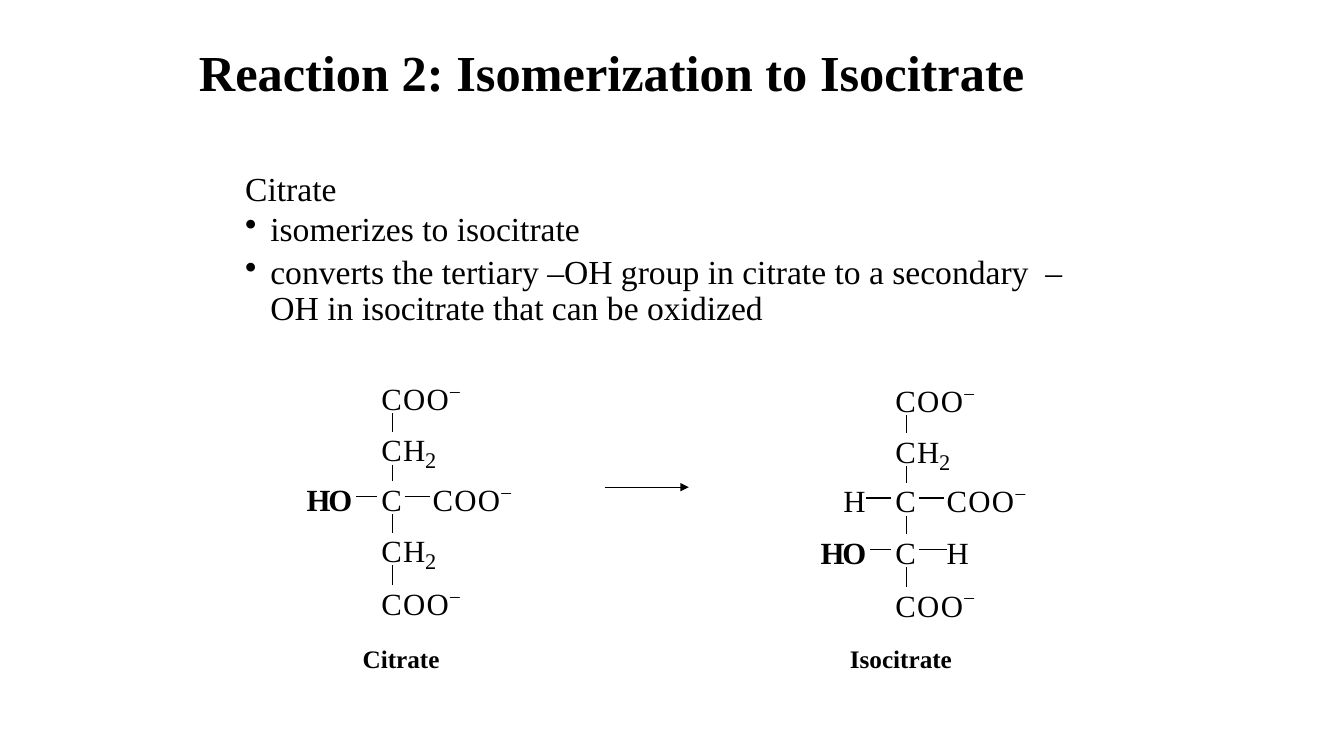
import lxml.etree
import pptx
import pptx.dml.color
import pptx.enum.shapes
import pptx.enum.text
import pptx.oxml.ns
import pptx.util

# Slide and its grid of 16 by 9 square cells
presentation = pptx.Presentation()
presentation.slide_width = pptx.util.Inches(40 / 3)
presentation.slide_height = pptx.util.Inches(7.5)
cell = presentation.slide_height / 9
slide = presentation.slides.add_slide(presentation.slide_layouts[6])
color = pptx.dml.color.RGBColor.from_string
qualified = pptx.oxml.ns.qn
BLACK = "000000"


def add_text(box, texts, frame_format, font_format, paragraph_format=None):
    """Place paragraphs in a box of left, top, width, height in cells."""
    shape = slide.shapes.add_textbox(*[round(length * cell) for length in box])
    for name, value in frame_format.items():
        setattr(shape.text_frame, name, value)
    for index, text in enumerate(texts):
        paragraph = shape.text_frame.paragraphs[0] if index == 0 else shape.text_frame.add_paragraph()
        for name, value in (paragraph_format or {}).items():
            setattr(paragraph, name, value)
        run = paragraph.add_run()
        run.text = text
        run.font.name = "Times New Roman"
        run.font.color.rgb = color(BLACK)
        for name, value in font_format.items():
            setattr(run.font, name, value)
    return shape


def add_line(start_x, start_y, end_x, end_y, width):
    """Draw a line between two points given in cells."""
    ends = [round(length * cell) for length in (start_x, start_y, end_x, end_y)]
    line = slide.shapes.add_connector(pptx.enum.shapes.MSO_CONNECTOR.STRAIGHT, *ends)
    line.line.color.rgb = color(BLACK)
    line.line.width = pptx.util.Pt(width)
    lxml.etree.SubElement(line._element.spPr, qualified("a:effectLst"))
    return line


# Title
add_text((2.25, 0.3, 10.52, 1.2), ["Reaction 2: Isomerization to Isocitrate"],
         {"word_wrap": True, "vertical_anchor": pptx.enum.text.MSO_ANCHOR.MIDDLE},
         {"size": pptx.util.Pt(36), "bold": True}, {"line_spacing": 0.9})

# Statement with two bullets
statement = add_text(
    (2.8, 2, 10, 5.8),
    ["Citrate", "isomerizes to isocitrate",
     "converts the tertiary –OH group in citrate to a secondary  –OH in isocitrate that can be oxidized"],
    {"word_wrap": True}, {"size": pptx.util.Pt(24)}, {"line_spacing": 0.9})
for index, paragraph in enumerate(statement.text_frame.paragraphs):
    properties = paragraph._p.get_or_add_pPr()
    properties.set("marL", str(pptx.util.Inches(0.25)))
    properties.set("indent", str(-pptx.util.Inches(0.25)))
    if index > 0:
        paragraph.space_before = paragraph.space_after = pptx.util.Pt(2.4)
        bullet = lxml.etree.SubElement(properties, qualified("a:buChar"))
        bullet.set("char", "•")

# Reaction arrow
arrow = add_line(7.2, 5.8, 8.2, 5.8, 0.75)
arrowhead = lxml.etree.SubElement(arrow.line._get_or_add_ln(), qualified("a:tailEnd"))
arrowhead.set("type", "triangle")

# Captions
for caption, left in (("Citrate", 4.2), ("Isocitrate", 10)):
    add_text((left, 7.6, 3, 0.48), [caption], {"word_wrap": True},
             {"size": pptx.util.Pt(18), "bold": True})

# Letters: box width, advance to the next letter, vertical shift, box height, size
letters = {
    "C": (0.24, 0.26, 0, 0.44, 22),
    "O": (0.26, 0.28, 0, 0.44, 22),
    "H": (0.26, 0.26, 0, 0.44, 22),
    "2": (0.13, 0.13, 0.18, 0.32, 16),
    "–": (0.13, 0.13, -0.07, 0.32, 24),
}
letter_frame = {"margin_left": 0, "margin_top": 0, "margin_right": 0, "margin_bottom": 0,
                "word_wrap": False, "auto_size": pptx.enum.text.MSO_AUTO_SIZE.SHAPE_TO_FIT_TEXT}

# Molecules: backbone groups by row, and side groups as row, text, offset, bond start and end
row_offsets = [0, 0.61, 1.2, 1.81, 2.44]
molecules = [
    (4.54, 4.52, ["COO–", "CH2", "C", "CH2", "COO–"],
     [(2, "HO", -0.89, -0.05, -0.3), (2, "COO–", 0.61, 0.28, 0.58)]),
    (10.66, 4.54, ["COO–", "CH2", "C", "C", "COO–"],
     [(2, "H", -0.62, -0.05, -0.35), (2, "COO–", 0.61, 0.28, 0.58),
      (3, "HO", -0.89, -0.05, -0.3), (3, "H", 0.61, 0.28, 0.61)]),
]
for carbon, top, backbone, side_groups in molecules:
    rows = [top + offset for offset in row_offsets]

    # Bonds
    for upper, lower in zip(rows, rows[1:]):
        add_line(carbon + 0.13, upper + 0.4, carbon + 0.13, lower + 0.01, 0.88)
    for row, text, offset, start, end in side_groups:
        add_line(carbon + start, rows[row] + 0.19, carbon + end, rows[row] + 0.19, 0.88)

    # Groups of atoms
    groups = [(row, text, 0) for row, text in enumerate(backbone)]
    groups += [side_group[:3] for side_group in side_groups]
    for row, text, offset in groups:
        left = carbon + offset
        bold = text == "HO"
        for letter in text:
            width, advance, shift, height, size = letters[letter]
            box = (left, rows[row] + shift, 0.29 if bold else width, height)
            shape = add_text(box, [letter], letter_frame, {"size": pptx.util.Pt(size), "bold": bold})
            if letter == "–":
                run = shape.text_frame.paragraphs[0].runs[0]
                run._r.get_or_add_rPr().set("baseline", "30000")
            left += advance

presentation.save("out.pptx")
